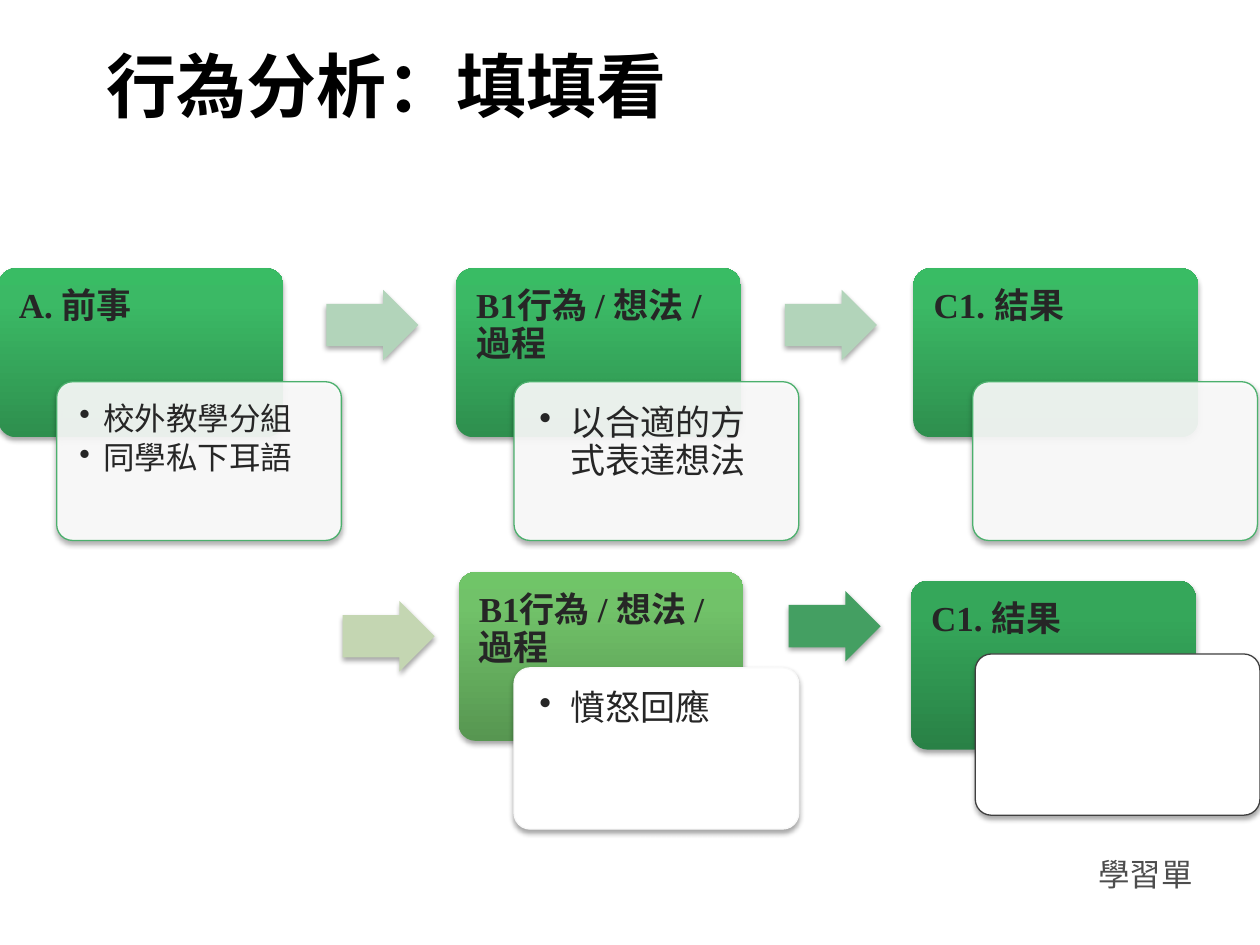
import pptx
import pptx.util
import pptx.oxml
import pptx.oxml.ns
import pptx.dml.color
import pptx.enum.shapes
import pptx.enum.text
from lxml import etree

Inches, Pt = pptx.util.Inches, pptx.util.Pt
RGB = pptx.dml.color.RGBColor.from_string
MSO = pptx.enum.shapes.MSO_SHAPE
ANCHOR = pptx.enum.text.MSO_ANCHOR
NS = pptx.oxml.ns.nsdecls("a")

THEME = {
    "latin": "Times New Roman", "cjk": "Noto Sans CJK SC",
    "title": 40, "head": 20, "small": 18,
    "black": "000000", "ink": "262626", "footer": "4D4D4D", "card": "FFFFFF",
    "green": ("2E8F4E", "3BB965", "39BC64"),
    "lime": ("579651", "71C269", "70C568"),
    "deep": ("298146", "35A75A", "33AA5A"),
    "outline": "4CB06D", "pale": "F9F9F9", "dark": "3F3F3F",
    "mint": "B2D4BA", "sage": "C4D6B2", "leaf": "449F62",
}


def add_block(kind, box, adjust, fill, line=None, opacity=100):
    """Preset shape with a soft shadow; a tuple fill is a bottom-to-top gradient."""
    sp = s.shapes.add_shape(kind, *map(Inches, box))
    for i, value in enumerate(adjust):
        sp.adjustments[i] = value
    if isinstance(fill, tuple):
        stops = "".join(f'<a:gs pos="{pos}000"><a:srgbClr val="{c}"/></a:gs>'
                        for pos, c in zip((0, 80, 100), fill))
        sp._element.spPr.append(etree.fromstring(
            f'<a:gradFill {NS} rotWithShape="1"><a:gsLst>{stops}</a:gsLst>'
            '<a:lin ang="16200000" scaled="0"/></a:gradFill>'))
    else:
        sp.fill.solid()
        sp.fill.fore_color.rgb = RGB(fill)
        if opacity < 100:
            color = sp._element.spPr.find(".//" + pptx.oxml.ns.qn("a:srgbClr"))
            etree.SubElement(color, pptx.oxml.ns.qn("a:alpha"), val=f"{opacity}000")
    if line:
        sp.line.color.rgb = RGB(line)
        sp.line.width = Pt(0.75)
    else:
        sp.line.fill.background()
    sp._element.spPr.append(etree.fromstring(
        f'<a:effectLst {NS}><a:outerShdw blurRad="{Pt(3.1)}" dist="{Pt(1.8)}" dir="5400000" '
        'rotWithShape="0"><a:srgbClr val="000000"><a:alpha val="35000"/></a:srgbClr>'
        '</a:outerShdw></a:effectLst>'))


def add_text(box, lines, size, color, font="cjk", bold=False, inset=None,
             indent=0, spacing=None, after=None, anchor=ANCHOR.TOP):
    tf = s.shapes.add_textbox(*map(Inches, box)).text_frame
    frame = {"word_wrap": True, "vertical_anchor": anchor}
    if inset:
        sides = ("margin_left", "margin_top", "margin_right", "margin_bottom")
        frame.update(zip(sides, map(Inches, inset)))
    for name, value in frame.items():
        setattr(tf, name, value)
    for i, line in enumerate(lines):
        p = tf.paragraphs[0] if i == 0 else tf.add_paragraph()
        if spacing:
            p.line_spacing = spacing
        if after:
            p.space_after = Pt(after)
        if indent:
            pPr = p._p.get_or_add_pPr()
            pPr.set("marL", str(Inches(indent)))
            pPr.set("indent", str(-Inches(indent)))
            etree.SubElement(pPr, pptx.oxml.ns.qn("a:buChar"), char="•")
        r = p.add_run()
        r.text = line
        for name, value in {"name": THEME[font], "size": Pt(THEME[size]), "bold": bold}.items():
            setattr(r.font, name, value)
        r.font.color.rgb = RGB(THEME[color])
        etree.SubElement(r._r.get_or_add_rPr(), pptx.oxml.ns.qn("a:ea"), typeface=THEME["cjk"])


prs = pptx.Presentation()
prs.slide_width, prs.slide_height = Inches(10), Inches(7.5)
s = prs.slides.add_slide(prs.slide_layouts[6])

# Title
add_text((0.75, 0.36, 5.08, 0.62), ["行為分析：填填看"], "title", "black", bold=True,
         anchor=ANCHOR.MIDDLE)

# Steps: heading, header left/top, header fill, card left/top/height, card line, opacity, bullets, size
BEHAVIOUR, RESULT = "B1行為 / 想法 / 過程", "C1. 結果"
steps = [
    ("A. 前事", -0.01, 2.13, "green", 0.45, 3.03, 1.26, "outline", 90,
     ["校外教學分組", "同學私下耳語"], "small"),
    (BEHAVIOUR, 3.62, 2.13, "green", 4.08, 3.03, 1.26, "outline", 90,
     ["以合適的方式表達想法"], "head"),
    (RESULT, 7.25, 2.13, "green", 7.72, 3.03, 1.26, "outline", 90, [], "head"),
    (BEHAVIOUR, 3.64, 4.54, "lime", 4.08, 5.3, 1.28, "pale", 100, ["憤怒回應"], "head"),
    (RESULT, 7.23, 4.61, "deep", 7.74, 5.19, 1.28, "dark", 100, [], "head"),
]
WIDTH = 2.26
for heading, x, y, fill, cx, cy, ch, line, opacity, bullets, size in steps:
    add_block(MSO.ROUNDED_RECTANGLE, (x, y, WIDTH, 1.34), [0.1], THEME[fill])
    add_text((x, y, WIDTH, 0.9), [heading], "head", "ink", font="latin", bold=True,
             inset=(0.16, 0.16, 0.16, 0.08), spacing=0.9, after=7)
    add_block(MSO.ROUNDED_RECTANGLE, (cx, cy, WIDTH, ch), [0.1], THEME["card"],
              THEME[line], opacity)
    if bullets:
        pad, indent = (0.14, 0.19) if size == "small" else (0.16, 0.25)
        add_text((cx + 0.04, cy + 0.03, WIDTH - 0.07, ch - 0.07), bullets, size, "ink",
                 inset=(pad,) * 4, indent=indent, spacing=0.9, after=3)

# Arrows between steps
for x, y, fill in [(2.59, 2.3, "mint"), (6.23, 2.3, "mint"),
                   (2.72, 4.77, "sage"), (6.26, 4.69, "leaf")]:
    add_block(MSO.RIGHT_ARROW, (x, y, 0.73, 0.56), [0.6, 0.5], THEME[fill])

# Footer label
add_text((8.62, 6.74, 1.1, 0.4), ["學習單"], "small", "footer")

prs.save("out.pptx")
